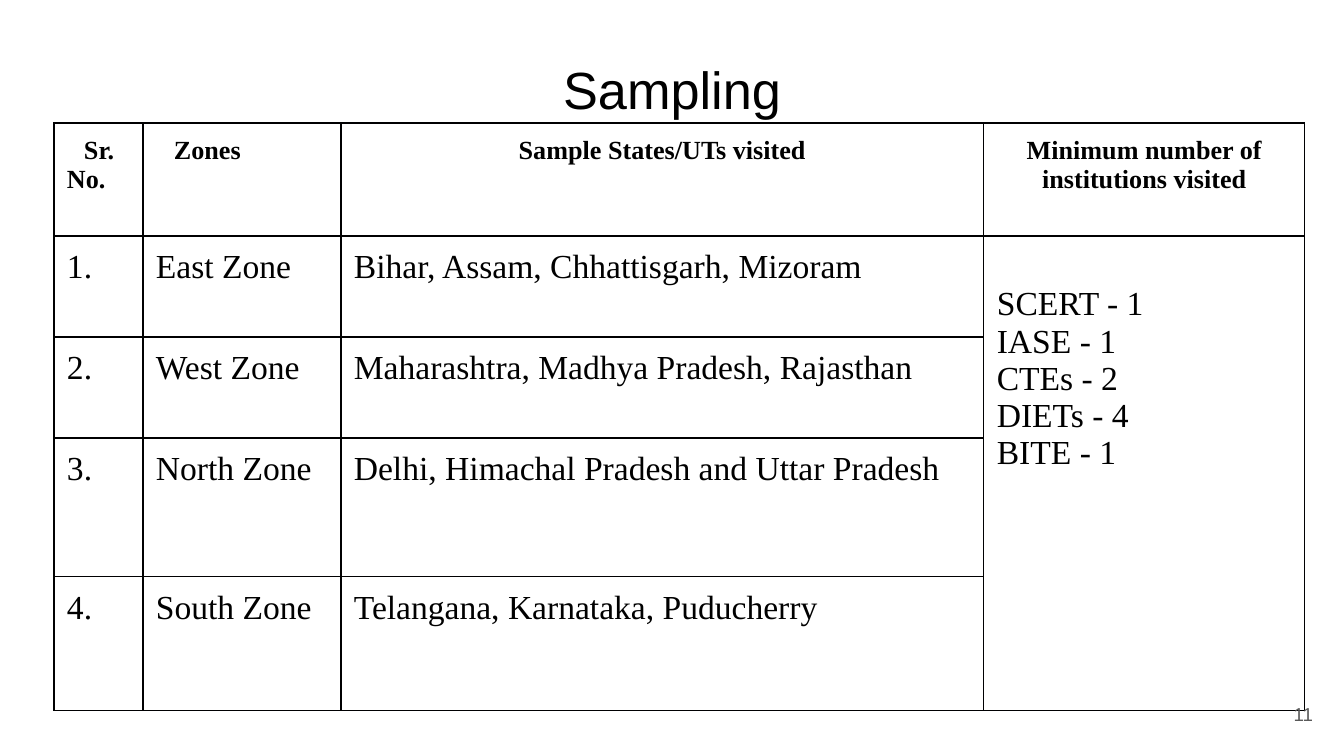
from lxml.etree import SubElement
from pptx import Presentation
from pptx.dml.color import RGBColor
from pptx.enum.text import MSO_ANCHOR as Anchor, PP_ALIGN as Align
from pptx.oxml.ns import qn
from pptx.util import Pt

PX = 914400 / 134.4
INSET = 13
SERIF = "Times New Roman"


def px(length):
    return round(length * PX)


def write(holder, text, size=18, font=SERIF, color="000000", bold=False,
          align=Align.LEFT, anchor=Anchor.TOP, indent=0, top=INSET):
    """Fill a text frame or table cell, one paragraph per line of text."""
    frame = getattr(holder, "text_frame", holder)
    frame.word_wrap = True
    holder.margin_left = holder.margin_right = holder.margin_bottom = px(INSET)
    holder.margin_top = px(top)
    holder.vertical_anchor = anchor
    frame.text = text
    for paragraph in frame.paragraphs:
        paragraph.alignment = align
        if indent:
            paragraph._p.get_or_add_pPr().set("indent", str(px(indent)))
        for run in paragraph.runs:
            run.font.size = Pt(size)
            run.font.name = font
            run.font.bold = bold
            run.font.color.rgb = RGBColor.from_string(color)


presentation = Presentation()
presentation.slide_width = px(1344)
presentation.slide_height = px(756)
slide = presentation.slides.add_slide(presentation.slide_layouts[6])

# Title
title = slide.shapes.add_textbox(px(46), px(44), px(1252), px(85))
write(title.text_frame, "Sampling", size=28, font="Arial", align=Align.CENTER)

# Table grid
column_widths = [89, 198, 643, 321]
row_heights = [113, 101, 101, 139, 134]
table = slide.shapes.add_table(
    len(row_heights), len(column_widths), px(54), px(123),
    px(sum(column_widths)), px(sum(row_heights))).table
table.first_row = False
table.horz_banding = False
for column, width in zip(table.columns, column_widths):
    column.width = px(width)
for row, height in zip(table.rows, row_heights):
    row.height = px(height)

# Cell borders, without fill
for cell in table.iter_cells():
    properties = cell._tc.get_or_add_tcPr()
    for side in ("a:lnL", "a:lnR", "a:lnT", "a:lnB"):
        line = SubElement(properties, qn(side), w=str(Pt(0.75)))
        fill = SubElement(line, qn("a:solidFill"))
        SubElement(fill, qn("a:srgbClr"), val="000001")
    cell.fill.background()

# Header row
headers = [
    ("Sr. No.", Align.LEFT, 17),
    ("Zones", Align.LEFT, 18),
    ("Sample States/UTs visited", Align.CENTER, 0),
    ("Minimum number of institutions visited", Align.CENTER, 0),
]
for column, (text, align, indent) in enumerate(headers):
    write(table.cell(0, column), text, size=14, bold=True, align=align, indent=indent)

# Zones and their states
zones = [
    ("East Zone", "Bihar, Assam, Chhattisgarh, Mizoram"),
    ("West Zone", "Maharashtra, Madhya Pradesh, Rajasthan"),
    ("North Zone", "Delhi, Himachal Pradesh and Uttar Pradesh"),
    ("South Zone", "Telangana, Karnataka, Puducherry"),
]
for number, (zone, states) in enumerate(zones, start=1):
    for column, text in enumerate((f"{number}.", zone, states)):
        write(table.cell(number, column), text)

# Institutions, one cell for all zones
institutions = table.cell(1, 3)
institutions.merge(table.cell(4, 3))
write(institutions, "SCERT - 1\nIASE - 1\nCTEs - 2\nDIETs - 4\nBITE - 1", top=50)

# Slide number
page_number = slide.shapes.add_textbox(px(1246), px(685), px(80), px(58))
write(page_number.text_frame, "11", size=10, font="Arial", color="595959",
      align=Align.RIGHT, anchor=Anchor.MIDDLE)

presentation.save("out.pptx")
